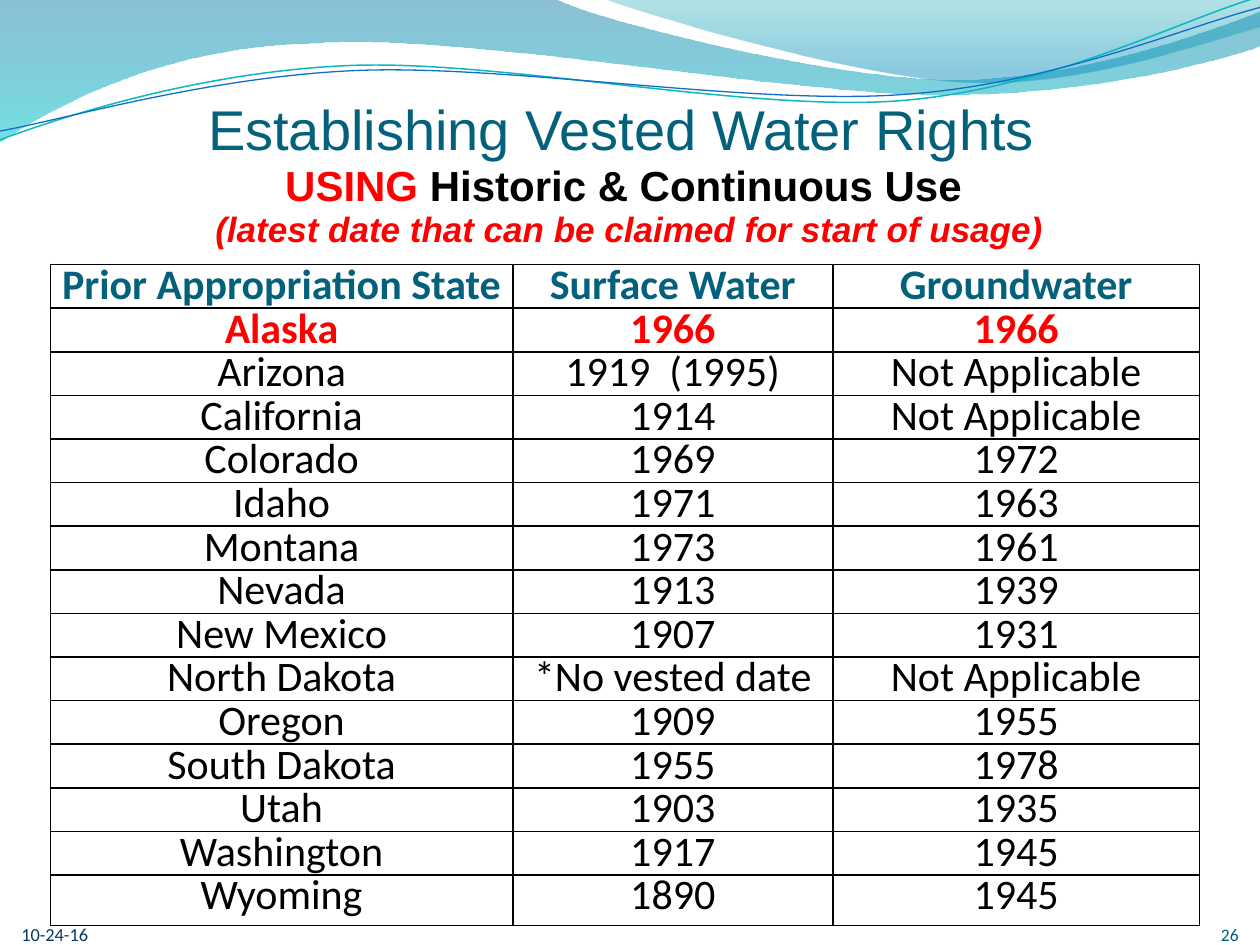
from dataclasses import dataclass
from math import cos, radians, sin
from typing import NamedTuple

from lxml import etree
from pptx import Presentation
from pptx.dml.color import RGBColor
from pptx.enum import text as txt
from pptx.oxml import ns
from pptx.util import Inches, Pt


@dataclass(frozen=True)
class Theme:
    teal: str = "04617B"
    red: str = "FF0000"
    black: str = "000000"
    white: str = "FFFFFF"
    navy: str = "083763"
    page: str = "045D75"
    head: str = "Arial"
    body: str = "Calibri"
    title: float = 32
    sub: float = 24
    note: float = 20
    cell: float = 24
    date: float = 10.5
    num: float = 10


class Stop(NamedTuple):
    pos: float
    color: str
    alpha: int


class Wave(NamedTuple):
    start: tuple
    segs: list  # six numbers: a curve; two numbers: a straight line
    stops: tuple = ()
    line: str = ""
    width: float = 0
    mid: tuple = (0, 0)
    tilt: float = 0


class Run(NamedTuple):
    text: str
    size: float
    color: str
    bold: bool = False
    italic: bool = False


T = Theme()
ALIGN = txt.PP_ALIGN
ANCHOR = txt.MSO_ANCHOR

WAVES = [
    Wave((0, 0), [(4.4, -0.01), (4.76, 0.17, 6.64, 0.63, 7.58, 0.63),
                  (8.53, 0.63, 9.58, 0.26, 10, 0.09), (10.01, 0.36),
                  (9.83, 0.44, 8.7, 0.76, 7.46, 0.75),
                  (6.22, 0.75, 3.82, 0.28, 2.57, 0.34),
                  (1.29, 0.36, 0.46, 0.83, -0.01, 1.13), (0, 0)],
         stops=(Stop(0, "0074A1", 45), Stop(1, "00C6CF", 55))),
    Wave((4.79, -0.01), [(5.09, 0.11, 6.82, 0.62, 7.69, 0.65),
                         (8.56, 0.69, 9.61, 0.32, 10, 0.21), (10, 0),
                         (4.79, -0.01)],
         stops=(Stop(0, "00A1A9", 30), Stop(0.8, "008BBF", 45))),
    Wave((0, 1.11), [(0.48, 0.93, 1.58, 0.57, 2.77, 0.52),
                     (3.95, 0.47, 5.93, 0.89, 7.13, 0.8),
                     (8.33, 0.71, 9.38, 0.15, 9.98, -0.02)],
         line="0AB8BF", width=0.85, mid=(4.99, 0.58), tilt=-2.7),
    Wave((0, 1.04), [(0.47, 0.96, 1.64, 0.61, 2.83, 0.56),
                     (4.03, 0.51, 5.97, 0.84, 7.17, 0.75),
                     (8.36, 0.67, 9.41, 0.21, 10, 0.06)],
         line="0F6FC6", width=0.75, mid=(5, 0.59), tilt=-2.7),
]

COLS = (3.67, 2.54, 2.91)
ROWS = [
    ("Prior Appropriation State", "Surface Water", "Groundwater"),
    ("Alaska", "1966", "1966"),
    ("Arizona", "1919  (1995)", "Not Applicable"),
    ("California", "1914", "Not Applicable"),
    ("Colorado", "1969", "1972"),
    ("Idaho", "1971", "1963"),
    ("Montana", "1973", "1961"),
    ("Nevada", "1913", "1939"),
    ("New Mexico", "1907", "1931"),
    ("North Dakota", "*No vested date", "Not Applicable"),
    ("Oregon", "1909", "1955"),
    ("South Dakota", "1955", "1978"),
    ("Utah", "1903", "1935"),
    ("Washington", "1917", "1945"),
    ("Wyoming", "1890", "1945"),
]


def rgb(code: str) -> RGBColor:
    return RGBColor.from_string(code)


def write(frame, lines: list, *, font: str = T.body, align=ALIGN.LEFT,
          space: float = 1.0) -> None:
    """Fill a text frame; each line is a list of runs."""
    for i, runs in enumerate(lines):
        para = frame.paragraphs[0] if i == 0 else frame.add_paragraph()
        para.alignment, para.line_spacing = align, space
        for item in runs:
            run = para.add_run()
            run.text = item.text
            run.font.name, run.font.size = font, Pt(item.size)
            run.font.bold, run.font.italic = item.bold, item.italic
            run.font.color.rgb = rgb(item.color)


def label(slide, at: tuple, lines: list, *, anchor, grow: bool = False,
          **form) -> None:
    frame = slide.shapes.add_textbox(*map(Inches, at)).text_frame
    frame.word_wrap, frame.vertical_anchor = True, anchor
    if grow:
        frame.auto_size = txt.MSO_AUTO_SIZE.SHAPE_TO_FIT_TEXT
    else:
        frame.margin_left = frame.margin_right = 0
        frame.margin_top = frame.margin_bottom = 0
    write(frame, lines, **form)


def level(wave: Wave, x: float, y: float) -> tuple:
    """Undo the tilt of a wave at one point."""
    turn, dx, dy = radians(-wave.tilt), x - wave.mid[0], y - wave.mid[1]
    return (Inches(wave.mid[0] + dx * cos(turn) - dy * sin(turn)),
            Inches(wave.mid[1] + dx * sin(turn) + dy * cos(turn)))


def bend(shape, segs: list) -> None:
    """Join each three straight steps that belong to a curve."""
    steps = iter(list(shape._element.iter(ns.qn("a:lnTo"))))
    for seg in segs:
        step = next(steps)
        if len(seg) == 6:
            curve = etree.Element(ns.qn("a:cubicBezTo"))
            step.addprevious(curve)
            for part in (step, next(steps), next(steps)):
                curve.append(part[0])
                part.getparent().remove(part)


def draw_wave(slide, wave: Wave) -> None:
    pts = [level(wave, *seg[i:i + 2]) for seg in wave.segs
           for i in range(0, len(seg), 2)]
    pen = slide.shapes.build_freeform(*level(wave, *wave.start))
    pen.add_line_segments(pts, close=bool(wave.stops))
    shape = pen.convert_to_shape()
    bend(shape, wave.segs)
    shape.rotation = wave.tilt
    shape.shadow.inherit = False
    if not wave.stops:
        shape.fill.background()
        shape.line.color.rgb = rgb(wave.line)
        shape.line.width = Pt(wave.width)
        return
    shape.line.fill.background()
    shape.fill.gradient()
    shape.fill.gradient_angle = 270
    for slot, stop in zip(shape.fill.gradient_stops, wave.stops):
        slot.position, slot.color.rgb = stop.pos, rgb(stop.color)
    tags = shape.fill._xPr.iter(ns.qn("a:srgbClr"))
    for tag, stop in zip(tags, wave.stops):
        etree.SubElement(tag, ns.qn("a:alpha"), val=str(stop.alpha * 1000))


def border(cell) -> None:
    """Put a thin line on all four sides, ahead of the cell fill."""
    props = cell._tc.get_or_add_tcPr()
    for i, side in enumerate(("lnL", "lnR", "lnT", "lnB")):
        edge = etree.Element(ns.qn("a:" + side), w=str(Pt(1)))
        fill = etree.SubElement(edge, ns.qn("a:solidFill"))
        etree.SubElement(fill, ns.qn("a:srgbClr"), val=T.black)
        props.insert(i, edge)


def draw_table(slide) -> None:
    frame = slide.shapes.add_table(len(ROWS), len(COLS), Inches(0.4), Inches(2.1),
                                   Inches(sum(COLS)), Inches(5.16))
    table = frame.table
    table.first_row = table.horz_banding = False
    for col, width in zip(table.columns, COLS):
        col.width = Inches(width)
    for r, row in enumerate(ROWS):
        table.rows[r].height = Inches(0.4 if r == len(ROWS) - 1 else 0.34)
        color = {0: T.teal, 1: T.red}.get(r, T.black)
        for c, word in enumerate(row):
            cell = table.cell(r, c)
            cell.margin_left = cell.margin_right = Inches(0.07)
            cell.margin_top = cell.margin_bottom = 0
            if word == "Montana" or row[0] == "New Mexico":
                cell.fill.solid()
                cell.fill.fore_color.rgb = rgb(T.white)
            else:
                cell.fill.background()
            border(cell)
            write(cell.text_frame, [[Run(word, T.cell, color, bold=r < 2)]],
                  align=ALIGN.CENTER, space=0.85)


def main() -> None:
    deck = Presentation()
    deck.slide_width, deck.slide_height = Inches(10), Inches(7.5)
    slide = deck.slides.add_slide(deck.slide_layouts[6])
    # Waves along the top
    for wave in WAVES:
        draw_wave(slide, wave)
    # Dates by state
    draw_table(slide)
    # Heading
    label(slide, (0.02, 0.73, 9.95, 1.32), [
        [Run("Establishing Vested Water Rights ", T.title, T.teal)],
        [Run("USING", T.sub, T.red, True),
         Run(" Historic & Continuous Use ", T.sub, T.black, True)],
        [Run("(latest date that can be claimed for start of usage)", T.note,
             T.red, True, True)],
    ], anchor=ANCHOR.MIDDLE, grow=True, font=T.head, align=ALIGN.CENTER, space=0.95)
    # Footer
    label(slide, (0.17, 7.1, 2.33, 0.4), [[Run("10-24-16", T.date, T.navy)]],
          anchor=ANCHOR.BOTTOM)
    label(slide, (9, 7.1, 0.83, 0.4), [[Run("26", T.num, T.page)]],
          anchor=ANCHOR.BOTTOM, align=ALIGN.RIGHT)
    deck.save("out.pptx")


if __name__ == "__main__":
    main()
